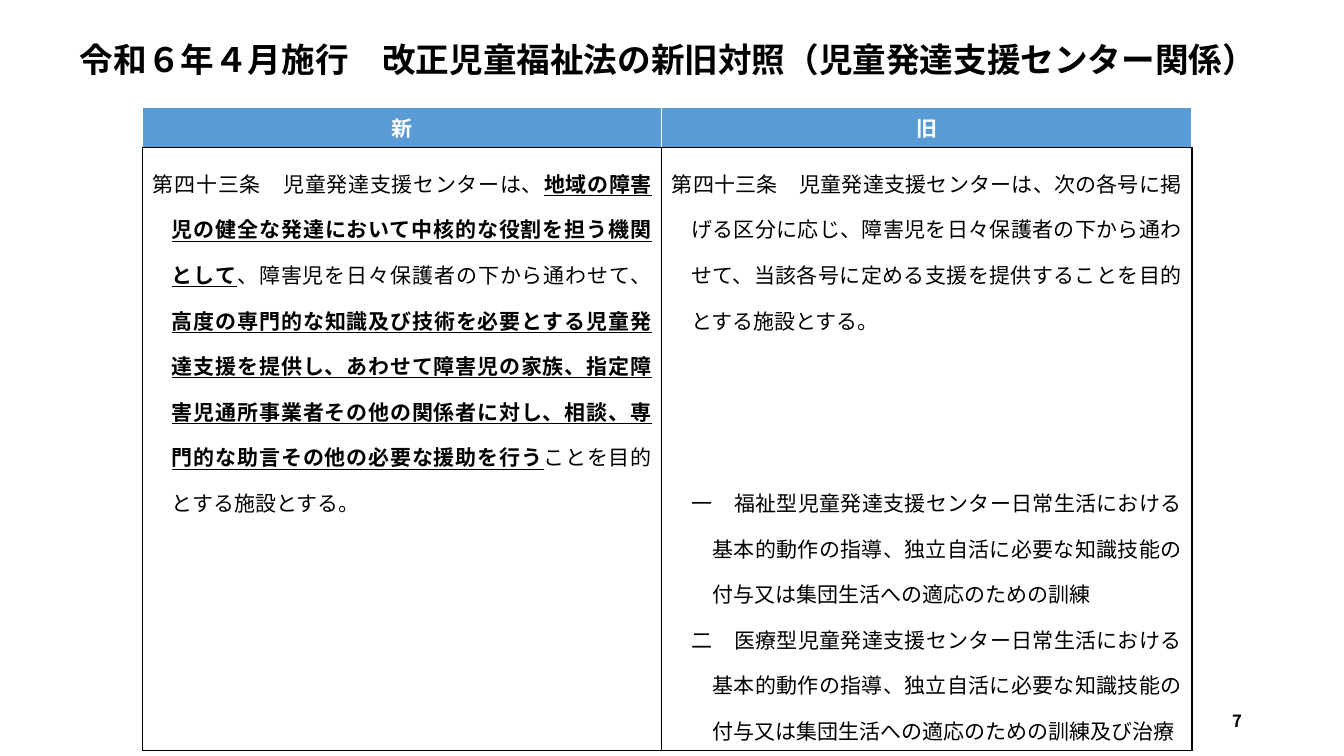
from lxml import etree
from pptx import Presentation
from pptx import util as u
from pptx.dml.color import RGBColor
from pptx.enum import lang, text
from pptx.oxml.ns import qn

HUES = {"head": "5B9BD5", "white": "FFFFFF", "ink": "000000"}
SANS = "Noto Sans CJK JP"
SIZE = 15
ALIGN = text.PP_ALIGN

NEW = [
    ("第四十三条　児童発達支援センターは、", False),
    ("地域の障害児の健全な発達において中核的な役割を担う機関として", True),
    ("、障害児を日々保護者の下から通わせて、", False),
    ("高度の専門的な知識及び技術を必要とする児童発達支援を提供し、あわせて障害児の家族、"
     "指定障害児通所事業者その他の関係者に対し、相談、専門的な助言その他の必要な援助を行う", True),
    ("ことを目的とする施設とする。", False),
]
OLD = ("第四十三条　児童発達支援センターは、次の各号に掲げる区分に応じ、障害児を日々保護者の下から"
       "通わせて、当該各号に定める支援を提供することを目的とする施設とする。")
ITEMS = [
    "一　福祉型児童発達支援センター日常生活における基本的動作の指導、独立自活に必要な"
    "知識技能の付与又は集団生活への適応のための訓練",
    "二　医療型児童発達支援センター日常生活における基本的動作の指導、独立自活に必要な"
    "知識技能の付与又は集団生活への適応のための訓練及び治療",
]
# Each clause: runs, left indent and hanging indent in cm, space before in points.
# The gap of three text lines sets the old items beside the end of the new text.
LEFT = [(NEW, 0.48, 0.48, 0)]
RIGHT = [([(OLD, False)], 0.48, 0.48, 0)] + [
    ([(item, False)], 1.02, 0.53, gap) for item, gap in zip(ITEMS, (97.8, 0))]


class Page:
    def __init__(self, slide):
        self.slide = slide

    def run(self, para, words, size=SIZE, hue="ink", bold=False, line=False, face=SANS):
        run = para.add_run()
        run.text = words
        font = run.font
        font.size, font.bold, font.underline = u.Pt(size), bold, line
        font.color.rgb = RGBColor.from_string(HUES[hue])
        font.name = face
        font.language_id = lang.MSO_LANGUAGE_ID.JAPANESE
        east = etree.SubElement(run._r.get_or_add_rPr(), qn("a:ea"))
        east.set("typeface", SANS)

    def line(self, shape, words, box, align, **look):
        """Move a shape to box (cm) and give it one line of text."""
        shape.left, shape.top, shape.width, shape.height = map(u.Cm, box)
        frame = shape.text_frame
        frame.word_wrap = True
        frame.auto_size = text.MSO_AUTO_SIZE.NONE
        frame.vertical_anchor = text.MSO_ANCHOR.MIDDLE
        para = frame.paragraphs[0]
        para.alignment = align
        self.run(para, words, bold=True, **look)

    def title(self, words, box):
        self.line(self.slide.shapes.title, words, box, ALIGN.CENTER, size=24, face="Arial")

    def number(self, words, box):
        shape = self.slide.shapes.add_textbox(0, 0, 0, 0)
        self.line(shape, words, box, ALIGN.RIGHT, size=12)

    def grid(self, left, top, cols, rows):
        frame = self.slide.shapes.add_table(
            len(rows), len(cols), u.Cm(left), u.Cm(top), u.Cm(sum(cols)), u.Cm(sum(rows)))
        table = frame.table
        for col, width in zip(table.columns, cols):
            col.width = u.Cm(width)
        for row, height in zip(table.rows, rows):
            row.height = u.Cm(height)
        return table

    def paint(self, cell, fill, edges):
        """Fill a cell and rule its edges, given as (side, hue) in L, R, T, B order."""
        cell.fill.solid()
        cell.fill.fore_color.rgb = RGBColor.from_string(HUES[fill])
        props = cell._tc.get_or_add_tcPr()
        for spot, (side, hue) in enumerate(edges):
            rule = etree.Element(qn(f"a:ln{side}"), w=str(u.Pt(1)))
            solid = etree.SubElement(rule, qn("a:solidFill"))
            etree.SubElement(solid, qn("a:srgbClr"), val=HUES[hue])
            props.insert(spot, rule)

    def head(self, cell, words):
        self.paint(cell, "head", zip("LRTB", ["white"] * 3 + ["ink"]))
        para = cell.text_frame.paragraphs[0]
        para.alignment = ALIGN.CENTER
        self.run(para, words, hue="white", bold=True)

    def body(self, cell, clauses):
        self.paint(cell, "white", zip("LRTB", ["ink"] * 4))
        frame = cell.text_frame
        for spot, (runs, left, hang, gap) in enumerate(clauses):
            para = frame.add_paragraph() if spot else frame.paragraphs[0]
            para.alignment = ALIGN.JUSTIFY
            para.line_spacing = 1.5
            para.space_before = u.Pt(gap)
            props = para._p.get_or_add_pPr()
            props.set("marL", str(u.Cm(left)))
            props.set("indent", str(-u.Cm(hang)))
            for words, mark in runs:
                self.run(para, words, bold=mark, line=mark)


def main():
    deck = Presentation()
    deck.slide_width, deck.slide_height = u.Cm(33.87), u.Cm(19.05)
    page = Page(deck.slides.add_slide(deck.slide_layouts[5]))
    table = page.grid(3.6, 2.7, cols=(13.08, 13.36), rows=(0.71, 7.9))
    for col, (label, clauses) in enumerate([("新", LEFT), ("旧", RIGHT)]):
        page.head(table.cell(0, col), label)
        page.body(table.cell(1, col), clauses)
    page.title("令和６年４月施行　改正児童福祉法の新旧対照（児童発達支援センター関係）",
               (1.5, 0.76, 30.66, 1.47))
    page.number("7", (23.93, 17.65, 7.62, 1.02))
    deck.save("out.pptx")


if __name__ == "__main__":
    main()
